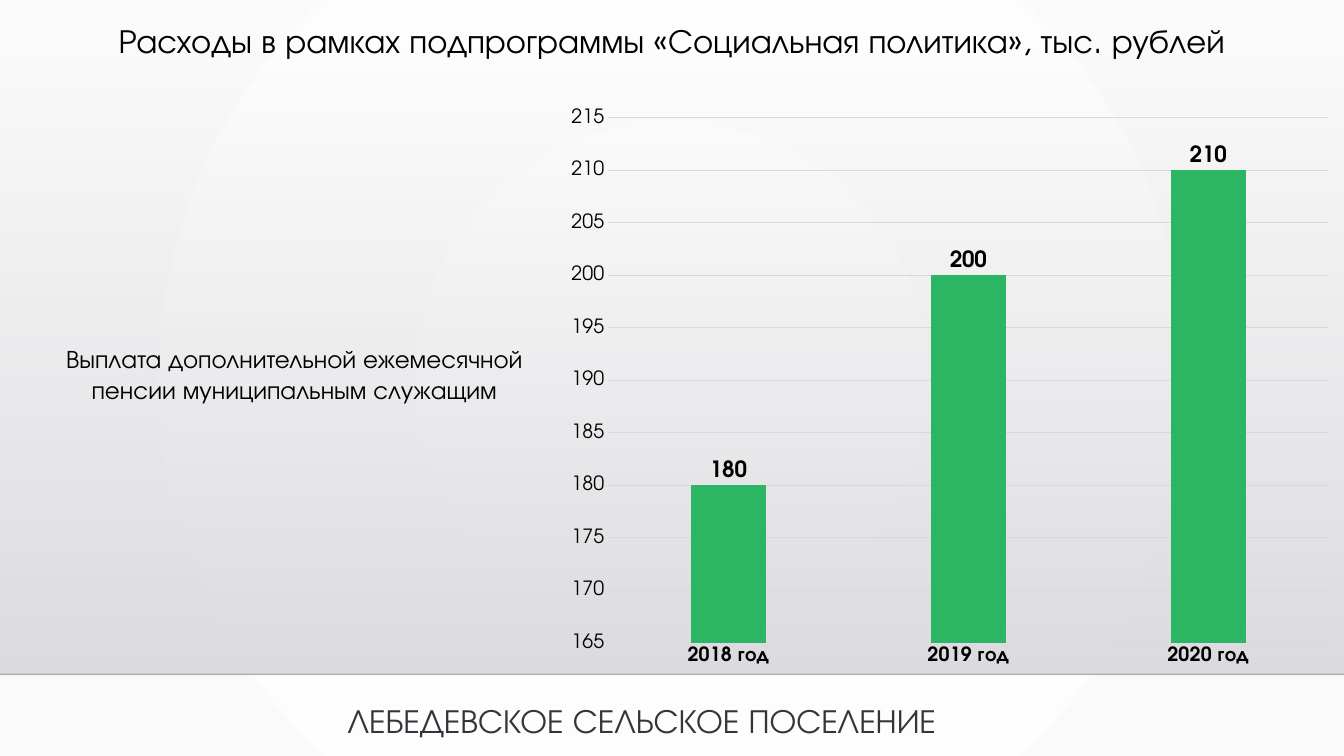
from dataclasses import dataclass

from lxml import etree
from pptx import Presentation
from pptx import util as u
from pptx.chart.data import CategoryChartData
from pptx.dml.color import RGBColor
from pptx.enum import chart as ch
from pptx.enum import shapes, text
from pptx.oxml.ns import qn

TITLE = "Расходы в рамках подпрограммы «Социальная политика», тыс. рублей"
FOOTER = "ЛЕБЕДЕВСКОЕ СЕЛЬСКОЕ ПОСЕЛЕНИЕ"
EXPENSE = "Выплата дополнительной ежемесячной пенсии муниципальным служащим"
SPENDING = {"2018 год": 180, "2019 год": 200, "2020 год": 210}
WIDTH, HEIGHT = 13.33, 7.5
PANEL_TOP, PANEL_BOTTOM = 0.51, 6.69


@dataclass(frozen=True)
class Theme:
    font: str = "TeX Gyre Adventor"
    ink: str = "000000"
    footer_ink: str = "34343B"
    bar: str = "2CB663"
    grid: str = "D9D9D9"
    rule: str = "000001"
    backdrop: tuple = ("FFFFFF", "FAFAFA")
    panel: tuple = ("DCDCE0", "DEDEE2")
    heading: int = 24
    body: int = 18
    value: int = 16
    axis: int = 14


theme = Theme()


def rgb(color):
    return RGBColor.from_string(color)


def set_font(font, size, color=theme.ink, bold=False):
    font.name = theme.font
    font.size = u.Pt(size)
    font.bold = bold
    font.color.rgb = rgb(color)


def set_gradient(fill, colors):
    fill.gradient()
    for stop, color in zip(fill.gradient_stops, colors):
        stop.color.rgb = rgb(color)


def set_alpha(color_element, percent):
    etree.SubElement(color_element, qn("a:alpha"), val=str(percent * 1000))


def add_text(slide, box, content, size, color=theme.ink,
             align=text.PP_ALIGN.CENTER, wrap=True, grow=True, spacing=None):
    frame = slide.shapes.add_textbox(*map(u.Inches, box)).text_frame
    frame.word_wrap = wrap
    frame.auto_size = (text.MSO_AUTO_SIZE.SHAPE_TO_FIT_TEXT if grow
                       else text.MSO_AUTO_SIZE.NONE)
    paragraph = frame.paragraphs[0]
    paragraph.text = content
    paragraph.alignment = align
    paragraph.line_spacing = spacing
    set_font(paragraph.font, size, color)


def add_backdrop(slide):
    fill = slide.background.fill
    set_gradient(fill, theme.backdrop)
    gradient = slide.element.xpath(".//p:bg//a:gradFill")[0]
    gradient.remove(gradient.find(qn("a:lin")))
    radial = etree.SubElement(gradient, qn("a:path"), path="circle")
    center = {side: "50000" for side in "ltrb"}
    etree.SubElement(radial, qn("a:fillToRect"), center)

    panel = slide.shapes.add_shape(
        shapes.MSO_SHAPE.RECTANGLE, 0, u.Inches(PANEL_TOP),
        u.Inches(WIDTH), u.Inches(PANEL_BOTTOM - PANEL_TOP))
    panel.shadow.inherit = False
    panel.line.fill.background()
    set_gradient(panel.fill, theme.panel)
    panel.fill.gradient_angle = 270
    set_alpha(panel.element.xpath(".//a:gs/a:srgbClr")[0], 0)

    rule = slide.shapes.add_connector(
        shapes.MSO_CONNECTOR.STRAIGHT, 0, u.Inches(PANEL_BOTTOM),
        u.Inches(WIDTH), u.Inches(PANEL_BOTTOM))
    rule.line.width = u.Pt(1)
    rule.line.color.rgb = rgb(theme.rule)
    set_alpha(rule.element.xpath(".//a:ln//a:srgbClr")[0], 20)
    etree.SubElement(rule.element.spPr, qn("a:effectLst"))


def style_line(line):
    line.width = u.Pt(0.75)
    line.color.rgb = rgb(theme.grid)


def add_spending_chart(slide, box):
    data = CategoryChartData()
    data.categories = list(SPENDING)
    data.add_series("Series 1", list(SPENDING.values()))
    chart = slide.shapes.add_chart(
        ch.XL_CHART_TYPE.COLUMN_CLUSTERED, *map(u.Inches, box), data).chart
    chart.has_legend = False
    chart.has_title = False
    set_font(chart.font, theme.axis)

    plot = chart.plots[0]
    plot.gap_width = 219
    plot.overlap = -27
    plot.vary_by_categories = False
    fill = plot.series[0].format.fill
    fill.solid()
    fill.fore_color.rgb = rgb(theme.bar)
    plot.has_data_labels = True
    labels = plot.data_labels
    labels.show_value = True
    labels.position = ch.XL_LABEL_POSITION.OUTSIDE_END
    set_font(labels.font, theme.value, bold=True)

    years, amounts = chart.category_axis, chart.value_axis
    for axis in (years, amounts):
        axis.major_tick_mark = ch.XL_TICK_MARK.NONE
        axis.minor_tick_mark = ch.XL_TICK_MARK.NONE
        set_font(axis.tick_labels.font, theme.axis, bold=axis is years)
    style_line(years.format.line)
    amounts.minimum_scale, amounts.maximum_scale = 165, 215
    amounts.major_unit = 5
    amounts.format.line.fill.background()
    style_line(amounts.major_gridlines.format.line)


def main():
    presentation = Presentation()
    presentation.slide_width = u.Inches(WIDTH)
    presentation.slide_height = u.Inches(HEIGHT)
    slide = presentation.slides.add_slide(presentation.slide_layouts[6])
    add_backdrop(slide)
    add_text(slide, (0, 0.19, WIDTH, 0.96), TITLE, theme.heading,
             grow=False, spacing=0.9)
    add_text(slide, (3.35, 6.89, 6.64, 0.5), FOOTER, theme.heading,
             theme.footer_ink, text.PP_ALIGN.LEFT, wrap=False)
    add_text(slide, (0.11, 3.36, 5.62, 0.71), EXPENSE, theme.body)
    add_spending_chart(slide, (5.51, 0.96, 7.82, 5.76))
    presentation.save("out.pptx")


if __name__ == "__main__":
    main()
